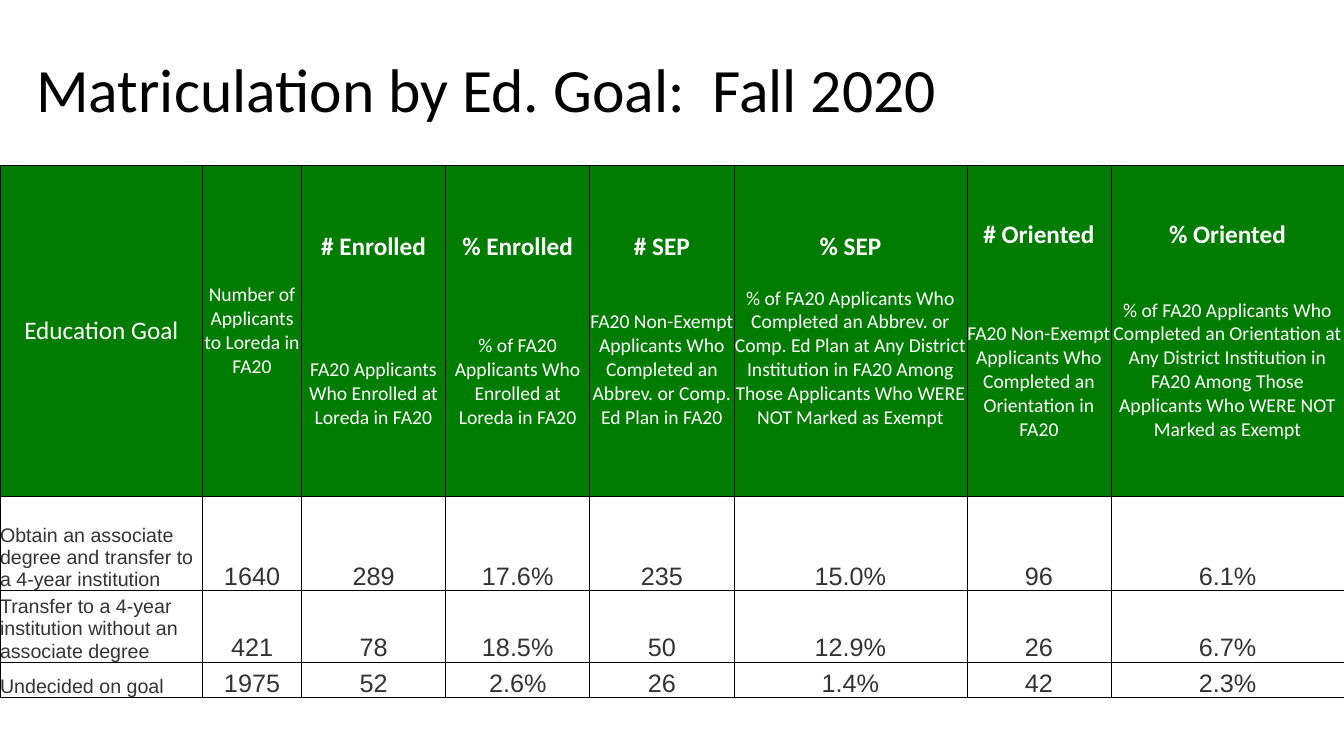
from lxml import etree
from pptx import Presentation, oxml
from pptx.dml.color import RGBColor
from pptx.enum import text as t
from pptx.oxml import ns
from pptx.util import Inches, Pt

GREEN, WHITE, BLACK, GREY = "007D00", "FFFFFF", "000000", "333333"
LINE = 17.1  # height of one 14 pt line, in points

COLS = [2.01, 0.98, 1.43, 1.43, 1.43, 2.31, 1.43, 2.31]
ROWS = [3.28, 0.94, 0.71, 0.35]
# heading, lines of gap below it, description
HEADS = [
    ("Education Goal", 0, ""),
    ("", 0, "Number of Applicants to Loreda in FA20"),
    ("# Enrolled", 4, "FA20 Applicants Who Enrolled at Loreda in FA20"),
    ("% Enrolled", 3, "% of FA20 Applicants Who Enrolled at Loreda in FA20"),
    ("# SEP", 2, "FA20 Non-Exempt Applicants Who Completed an Abbrev. "
     "or Comp. Ed Plan in FA20"),
    ("% SEP", 1, "% of FA20 Applicants Who Completed an Abbrev. or Comp. "
     "Ed Plan at Any District Institution in FA20 Among Those Applicants "
     "Who WERE NOT Marked as Exempt"),
    ("# Oriented", 3, "FA20 Non-Exempt Applicants Who Completed an "
     "Orientation in FA20"),
    ("% Oriented", 2, "% of FA20 Applicants Who Completed an Orientation at "
     "Any District Institution in FA20 Among Those Applicants Who WERE NOT "
     "Marked as Exempt"),
]
GOALS = [
    ("Obtain an associate degree and transfer to a 4-year institution",
     "1640", "289", "17.6%", "235", "15.0%", "96", "6.1%"),
    ("Transfer to a 4-year institution without an associate degree",
     "421", "78", "18.5%", "50", "12.9%", "26", "6.7%"),
    ("Undecided on goal",
     "1975", "52", "2.6%", "26", "1.4%", "42", "2.3%"),
]


def rgb(code):
    return RGBColor.from_string(code)


def write(frame, words, size=18, font="Calibri", color=WHITE, bold=False,
          align=t.PP_ALIGN.CENTER, gap=0, line=None):
    """Fill the first paragraph, or add one below the text already there."""
    para = frame.add_paragraph() if frame.text else frame.paragraphs[0]
    para.alignment = align
    para.space_before = Pt(gap)
    para.line_spacing = line
    run = para.add_run()
    run.text = words
    run.font.size = Pt(size)
    run.font.name = font
    run.font.bold = bold
    run.font.color.rgb = rgb(color)


def style(cell, fill, anchor):
    """Set fill, anchor, zero margins and thin black borders."""
    cell.fill.solid()
    cell.fill.fore_color.rgb = rgb(fill)
    cell.vertical_anchor = anchor
    cell.margin_left = cell.margin_right = 0
    cell.margin_top = cell.margin_bottom = 0
    props = cell._tc.get_or_add_tcPr()
    for i, side in enumerate("LRTB"):
        edge = oxml.parse_xml(f'<a:ln{side} {ns.nsdecls("a")} w="{Pt(0.5)}"/>')
        paint = etree.SubElement(edge, ns.qn("a:solidFill"))
        etree.SubElement(paint, ns.qn("a:srgbClr"), val=BLACK)
        props.insert(i, edge)


def add_title(slide, box):
    title = slide.shapes.title
    title.left, title.top, title.width, title.height = map(Inches, box)
    frame = title.text_frame
    frame.word_wrap = True
    frame.vertical_anchor = t.MSO_ANCHOR.MIDDLE
    write(frame, "Matriculation by Ed. Goal:  Fall 2020", size=44,
          color=BLACK, align=t.PP_ALIGN.LEFT, line=0.9)


def add_grid(slide, box):
    shape = slide.shapes.add_table(len(ROWS), len(COLS), *map(Inches, box))
    grid = shape.table
    grid.first_row = grid.horz_banding = False
    for col, wide in zip(grid.columns, COLS):
        col.width = Inches(wide)
    for row, high in zip(grid.rows, ROWS):
        row.height = Inches(high)
    for c, (head, lines, about) in enumerate(HEADS):
        cell = grid.cell(0, c)
        style(cell, GREEN, t.MSO_ANCHOR.MIDDLE)
        if head:
            write(cell.text_frame, head, bold=bool(about))
        if about:
            write(cell.text_frame, about, size=14, gap=lines * LINE)
    for r, goal in enumerate(GOALS, 1):
        for c, words in enumerate(goal):
            cell = grid.cell(r, c)
            style(cell, WHITE, t.MSO_ANCHOR.BOTTOM)
            write(cell.text_frame, words, font="Arial", color=GREY,
                  size=18 if c else 14,
                  align=t.PP_ALIGN.CENTER if c else t.PP_ALIGN.LEFT)


def main():
    deck = Presentation()
    deck.slide_width, deck.slide_height = Inches(13.33), Inches(7.5)
    slide = deck.slides.add_slide(deck.slide_layouts[5])
    add_title(slide, (0.26, 0.19, 11.93, 1.45))
    add_grid(slide, (0, 1.64, sum(COLS), sum(ROWS)))
    deck.save("out.pptx")


if __name__ == "__main__":
    main()
